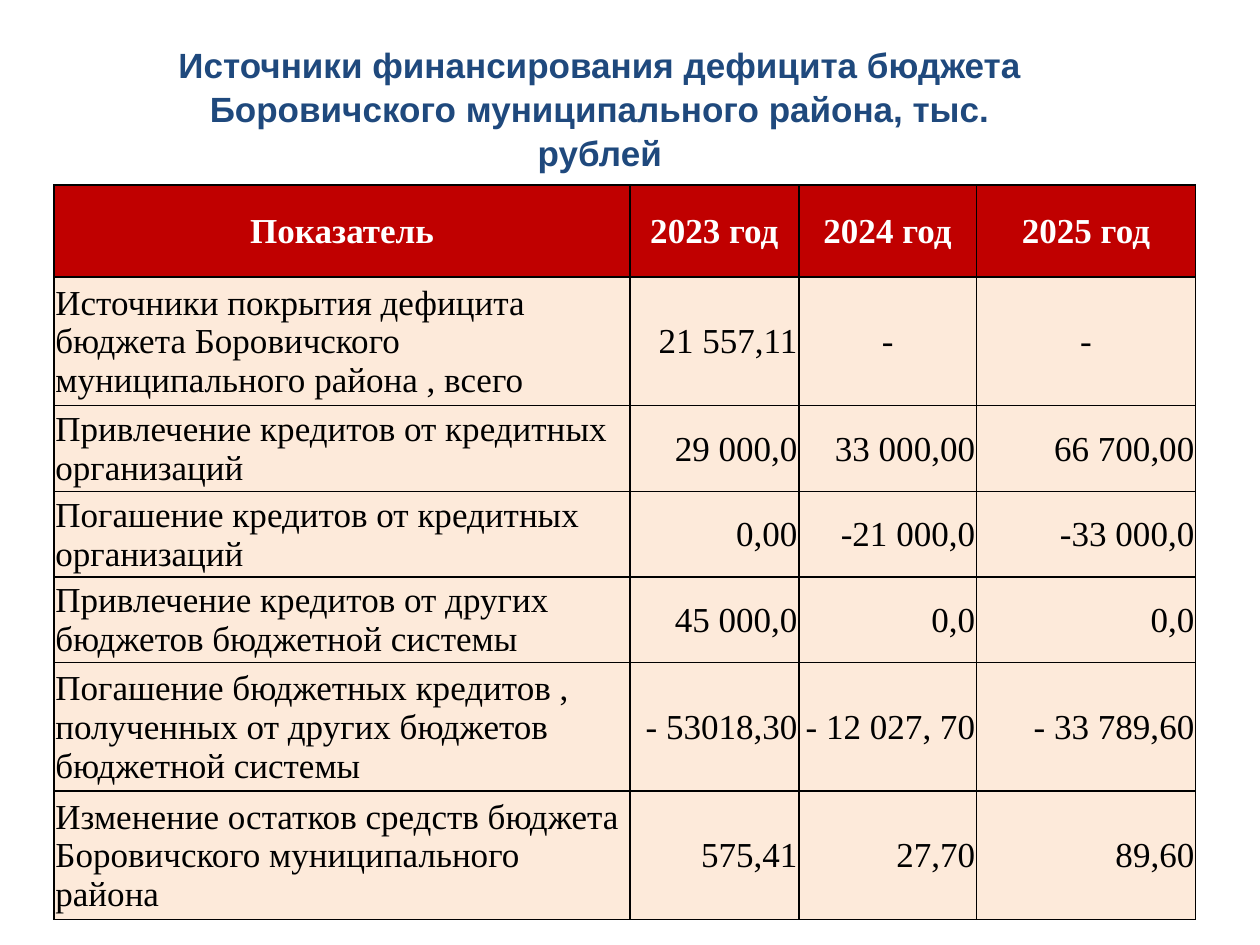
from typing import NamedTuple

from lxml import etree
from pptx import Presentation
from pptx.dml.color import RGBColor
from pptx.enum.text import MSO_ANCHOR, MSO_AUTO_SIZE, PP_ALIGN
from pptx.oxml.ns import qn
from pptx.util import Inches, Pt

LEFT, CENTER, RIGHT = PP_ALIGN.LEFT, PP_ALIGN.CENTER, PP_ALIGN.RIGHT
MIDDLE, TOP = MSO_ANCHOR.MIDDLE, MSO_ANCHOR.TOP
GROW = MSO_AUTO_SIZE.SHAPE_TO_FIT_TEXT
TITLE_ONLY = 5

COLORS = {
    "title": "1F497D",
    "header": "C00000",
    "header_text": "FFFFFF",
    "body": "FDEADA",
    "body_text": "000000",
    "border": "000000",
}
FONT_SIZE = 20
BORDER_WIDTH = 1
TITLE = "Источники финансирования дефицита бюджета Боровичского муниципального района, тыс. рублей"
HEADERS = ("Показатель", "2023 год", "2024 год", "2025 год")
COLUMN_WIDTHS = (4.57, 1.34, 1.41, 1.74)
HEADER_HEIGHT = 0.73
LINE_HEIGHT, ROW_PADDING = 0.34, 0


class Indicator(NamedTuple):
    name: str
    values: tuple[str, str, str]
    lines: int


INDICATORS = (
    Indicator("Источники покрытия дефицита бюджета Боровичского муниципального района , всего",
              ("21 557,11", "-", "-"), 3),
    Indicator("Привлечение кредитов от кредитных организаций",
              ("29 000,0", "33 000,00", "66 700,00"), 2),
    Indicator("Погашение кредитов от кредитных организаций",
              ("0,00", "-21 000,0", "-33 000,0"), 2),
    Indicator("Привлечение кредитов от других бюджетов бюджетной системы",
              ("45 000,0", "0,0", "0,0"), 2),
    Indicator("Погашение бюджетных кредитов , полученных от других бюджетов бюджетной системы",
              ("- 53018,30", "- 12 027, 70", "- 33 789,60"), 3),
    Indicator("Изменение остатков средств бюджета Боровичского муниципального района",
              ("575,41", "27,70", "89,60"), 3),
)


def write(paragraph, text: str, font: str, color: str, bold: bool, alignment) -> None:
    paragraph.alignment = alignment
    run = paragraph.add_run()
    run.text = text
    run.font.name = font
    run.font.size = Pt(FONT_SIZE)
    run.font.bold = bold
    run.font.color.rgb = RGBColor.from_string(COLORS[color])


def add_borders(cell) -> None:
    """Draw all four cell edges; they must precede the fill in the XML."""
    properties = cell._tc.get_or_add_tcPr()
    for index, edge in enumerate(("a:lnL", "a:lnR", "a:lnT", "a:lnB")):
        line = etree.Element(qn(edge), w=str(Pt(BORDER_WIDTH)))
        fill = etree.SubElement(line, qn("a:solidFill"))
        etree.SubElement(fill, qn("a:srgbClr"), val=COLORS["border"])
        properties.insert(index, line)


def fill_cell(cell, text: str, kind: str, alignment) -> None:
    cell.fill.solid()
    cell.fill.fore_color.rgb = RGBColor.from_string(COLORS[kind])
    add_borders(cell)
    cell.vertical_anchor = MIDDLE
    cell.margin_left = cell.margin_right = cell.margin_top = Inches(0.01)
    cell.margin_bottom = 0
    write(cell.text_frame.paragraphs[0], text, "Times New Roman",
          f"{kind}_text", kind == "header", alignment)


def add_title(slide) -> None:
    title = slide.shapes.title
    title.left, title.top = Inches(1.14), Inches(0.28)
    title.width, title.height = Inches(7.24), Inches(1.11)
    frame = title.text_frame
    frame.word_wrap = True
    frame.auto_size = GROW
    frame.vertical_anchor = TOP
    paragraph = frame.paragraphs[0]
    paragraph.line_spacing = 1.05
    write(paragraph, TITLE, "Arial", "title", True, CENTER)


def add_budget_table(slide) -> None:
    heights = [HEADER_HEIGHT] + [item.lines * LINE_HEIGHT + ROW_PADDING for item in INDICATORS]
    table = slide.shapes.add_table(
        len(heights), len(HEADERS), Inches(0.43), Inches(1.47),
        Inches(sum(COLUMN_WIDTHS)), Inches(sum(heights))).table
    for column, width in zip(table.columns, COLUMN_WIDTHS):
        column.width = Inches(width)
    for row, height in zip(table.rows, heights):
        row.height = Inches(height)
    for column, text in enumerate(HEADERS):
        fill_cell(table.cell(0, column), text, "header", CENTER)
    for row, item in enumerate(INDICATORS, start=1):
        fill_cell(table.cell(row, 0), item.name, "body", LEFT)
        for column, value in enumerate(item.values, start=1):
            fill_cell(table.cell(row, column), value, "body", CENTER if value == "-" else RIGHT)


def main() -> None:
    presentation = Presentation()
    presentation.slide_width, presentation.slide_height = Inches(10), Inches(7.5)
    slide = presentation.slides.add_slide(presentation.slide_layouts[TITLE_ONLY])
    add_title(slide)
    add_budget_table(slide)
    presentation.save("out.pptx")


if __name__ == "__main__":
    main()
